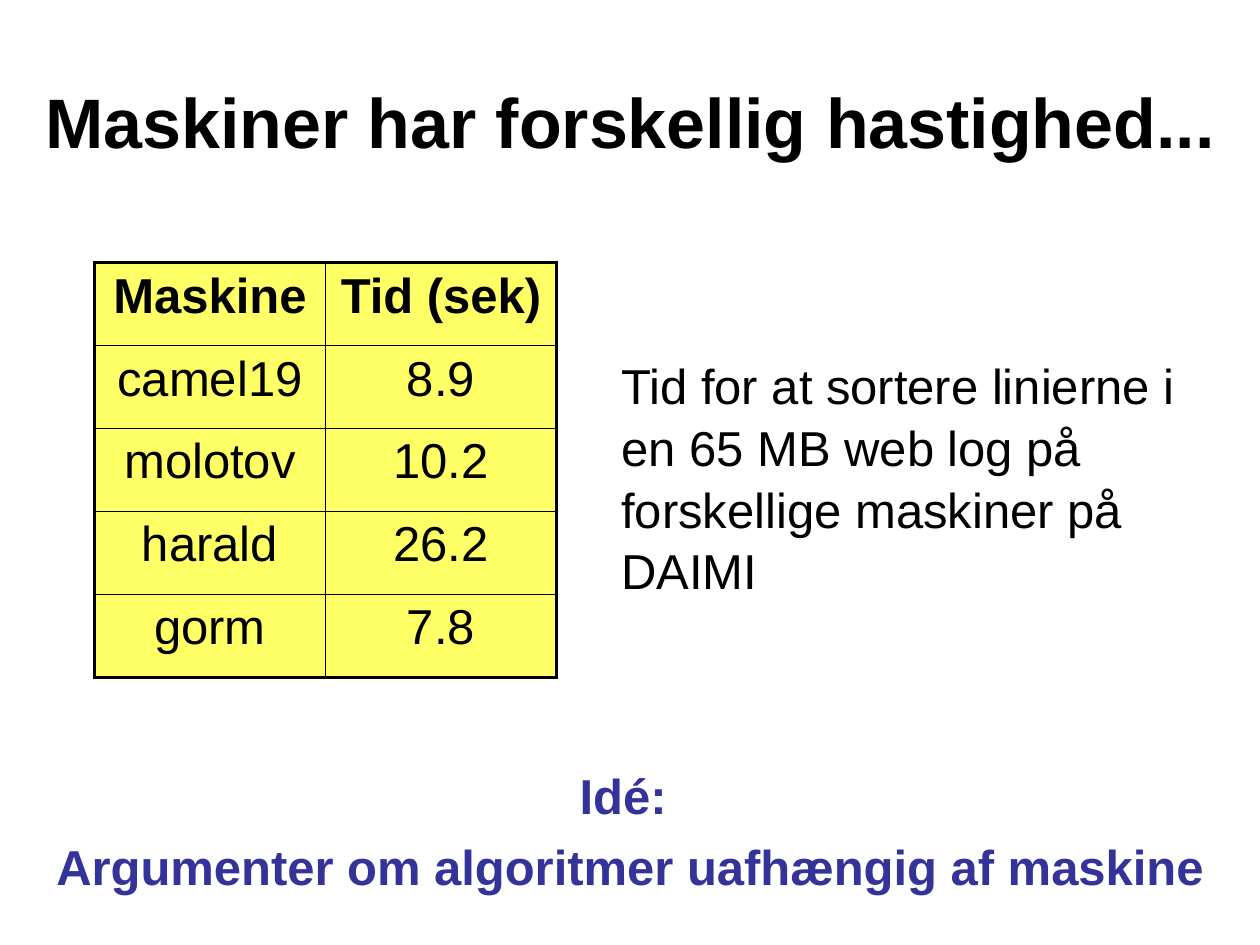
from lxml import etree
from pptx import Presentation, util as u
from pptx.dml.color import RGBColor
from pptx.enum import text as t
from pptx.oxml.ns import qn

PX = 7620
INK = "000000"
BLUE = "333399"
FILL = "FFFF66"
ROWS = [
    ("Maskine", "Tid (sek)"),
    ("camel19", "8.9"),
    ("molotov", "10.2"),
    ("harald", "26.2"),
    ("gorm", "7.8"),
]


def px(n):
    """Turn pixels into EMU."""
    return u.Emu(n * PX)


def color(hue):
    """Turn a hex string into a colour."""
    return RGBColor.from_string(hue)


def style(frame, size, hue=INK, bold=False, align=t.PP_ALIGN.CENTER, gap=0, lead=None):
    """Format every paragraph and run of a text frame."""
    for para in frame.paragraphs:
        para.alignment = align
        para.space_before = u.Pt(gap)
        para.line_spacing = lead
        for run in para.runs:
            font = run.font
            font.name, font.size, font.bold = "Arial", u.Pt(size), bold
            font.color.rgb = color(hue)


def label(slide, box, words, size, anchor=t.MSO_ANCHOR.TOP, **look):
    """Place a wrapped text box."""
    frame = slide.shapes.add_textbox(*map(px, box)).text_frame
    frame.word_wrap = True
    frame.vertical_anchor = anchor
    frame.text = words
    style(frame, size, **look)


def edge(cell, side, width):
    """Draw one border of a cell."""
    props = cell._tc.get_or_add_tcPr()
    line = etree.SubElement(props, qn("a:" + side), w=str(u.Pt(width)))
    fill = etree.SubElement(line, qn("a:solidFill"))
    etree.SubElement(fill, qn("a:srgbClr"), val=INK)


def times(slide, box):
    """Build the table of machines and their times."""
    left, top, width, height = box
    rows, cols = len(ROWS), len(ROWS[0])
    grid = slide.shapes.add_table(rows, cols, *map(px, box)).table
    grid.horz_banding = False
    for r, row in enumerate(ROWS):
        for c, word in enumerate(row):
            cell = grid.cell(r, c)
            cell.text = word
            style(cell.text_frame, 28, bold=r == 0, gap=5.6)
            outer = {"lnL": c == 0, "lnR": c == cols - 1,
                     "lnT": r == 0, "lnB": r == rows - 1}
            for side, thick in outer.items():
                edge(cell, side, 2.25 if thick else 1)
            cell.fill.solid()
            cell.fill.fore_color.rgb = color(FILL)


def main():
    """Build and save the slide."""
    deck = Presentation()
    deck.slide_width, deck.slide_height = px(1200), px(900)
    slide = deck.slides.add_slide(deck.slide_layouts[6])
    label(slide, (0, 40, 1200, 150), "Maskiner har forskellig hastighed...", 40,
          anchor=t.MSO_ANCHOR.MIDDLE, bold=True)
    label(slide, (580, 330, 560, 240),
          "Tid for at sortere linierne i en 65 MB web log på forskellige maskiner på DAIMI",
          28, align=t.PP_ALIGN.LEFT, gap=5.6, lead=1.05)
    times(slide, (90, 250, 440, 395))
    label(slide, (0, 720, 1200, 120),
          "Idé: \nArgumenter om algoritmer uafhængig af maskine",
          28, hue=BLUE, bold=True, gap=5.6, lead=1.05)
    deck.save("out.pptx")


if __name__ == "__main__":
    main()
